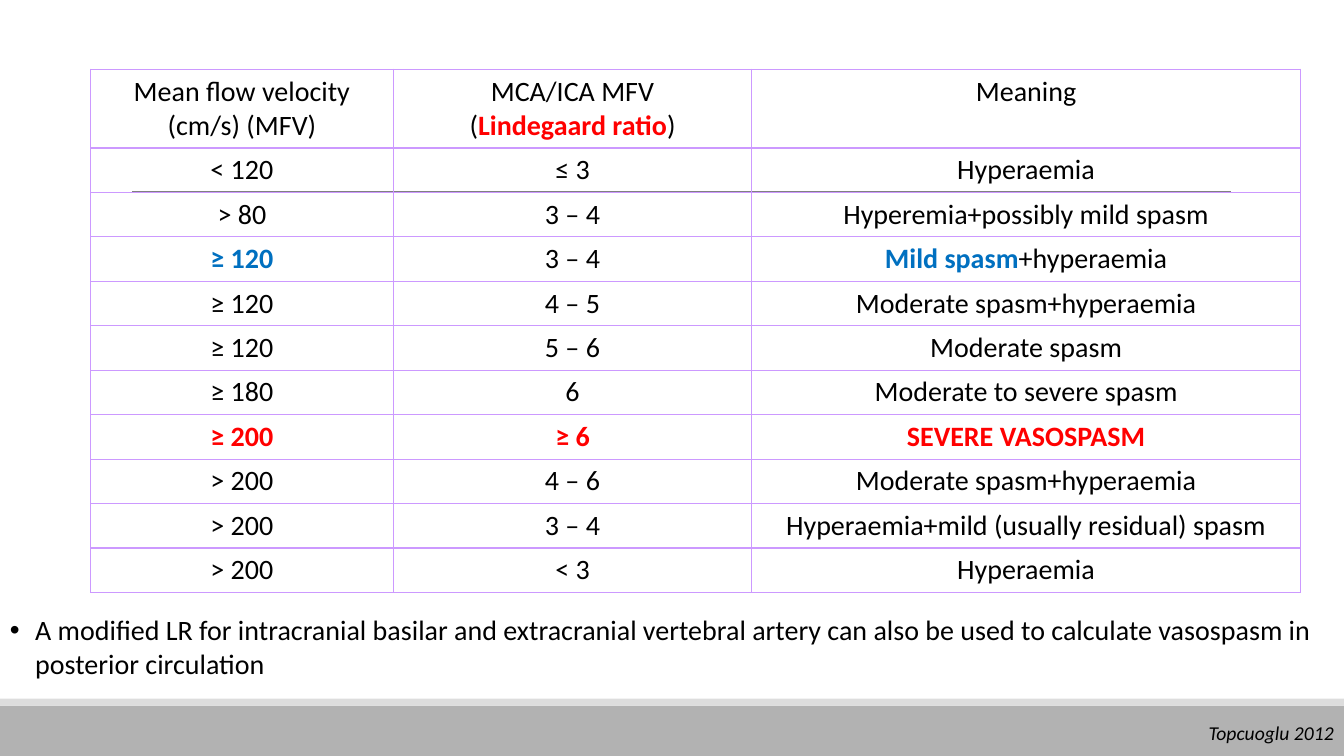
from dataclasses import dataclass

from lxml.etree import SubElement
from pptx import Presentation
from pptx.dml.color import RGBColor
from pptx.enum.shapes import MSO_CONNECTOR, MSO_SHAPE
from pptx.enum.text import PP_ALIGN
from pptx.oxml.ns import qn
from pptx.util import Pt


@dataclass(frozen=True)
class Theme:
    font: str = "Calibri"
    body_size: int = 20
    source_size: int = 14
    text: str = "000000"
    red: str = "FF0000"
    blue: str = "0070C0"
    border: str = "CC99FF"
    rule: str = "808080"
    footer: str = "B2B2B2"
    footer_edge: str = "DDDDDD"


THEME = Theme()
SLIDE_WIDTH, SLIDE_HEIGHT = 960, 540
COLUMN_WIDTHS = [216, 256.3, 391.7]
HEADER_HEIGHT, ROW_HEIGHT = 56, 31.75

ROWS = [
    ("Mean flow velocity (cm/s) (MFV)", "MCA/ICA MFV\n(Lindegaard ratio)", "Meaning"),
    ("< 120", "≤ 3", "Hyperaemia"),
    ("> 80", "3 – 4", "Hyperemia+possibly mild spasm"),
    ("≥ 120", "3 – 4", "Mild spasm+hyperaemia"),
    ("≥ 120", "4 – 5", "Moderate spasm+hyperaemia"),
    ("≥ 120", "5 – 6", "Moderate spasm"),
    ("≥ 180", "6", "Moderate to severe spasm"),
    ("≥ 200", "≥ 6", "SEVERE VASOSPASM"),
    ("> 200", "4 – 6", "Moderate spasm+hyperaemia"),
    ("> 200", "3 – 4", "Hyperaemia+mild (usually residual) spasm"),
    ("> 200", "< 3", "Hyperaemia"),
]
HIGHLIGHTS = {
    (0, 1): ("Lindegaard ratio", THEME.red),
    (3, 0): ("≥ 120", THEME.blue),
    (3, 2): ("Mild spasm", THEME.blue),
    (7, 0): ("≥ 200", THEME.red),
    (7, 1): ("≥ 6", THEME.red),
    (7, 2): ("SEVERE VASOSPASM", THEME.red),
}


class SlideBuilder:
    def __init__(self, page, theme):
        self.page = page
        self.theme = theme

    def style(self, span, size, colour=None, bold=False, italic=False):
        font = span.font
        font.name, font.size = self.theme.font, Pt(size)
        font.bold, font.italic = bold, italic
        font.color.rgb = RGBColor.from_string(colour or self.theme.text)

    def bar(self, top, height, colour):
        bar = self.page.shapes.add_shape(
            MSO_SHAPE.RECTANGLE, 0, Pt(top), Pt(SLIDE_WIDTH), Pt(height))
        bar.shadow.inherit = False
        bar.fill.solid()
        bar.fill.fore_color.rgb = RGBColor.from_string(colour)
        bar.line.fill.background()

    def rule(self, left, right, top):
        rule = self.page.shapes.add_connector(
            MSO_CONNECTOR.STRAIGHT, Pt(left), Pt(top), Pt(right), Pt(top))
        rule.line.width = Pt(0.5)
        rule.line.color.rgb = RGBColor.from_string(self.theme.rule)
        SubElement(rule.element.spPr, qn("a:effectLst"))

    def text(self, left, top, width, height, words, size, wrap=True, italic=False):
        box = self.page.shapes.add_textbox(Pt(left), Pt(top), Pt(width), Pt(height))
        box.text_frame.word_wrap = wrap
        box.text_frame.text = words
        para = box.text_frame.paragraphs[0]
        self.style(para.runs[0], size, italic=italic)
        return para

    def bullet(self, para, indent):
        properties = para._p.get_or_add_pPr()
        properties.set("marL", str(Pt(indent)))
        properties.set("indent", str(-Pt(indent)))
        SubElement(properties, qn("a:buFont"), typeface="Arial")
        SubElement(properties, qn("a:buChar"), char="•")

    def borders(self, cell):
        properties = cell._tc.get_or_add_tcPr()
        for side in ("lnL", "lnR", "lnT", "lnB"):
            line = SubElement(properties, qn(f"a:{side}"), w=str(Pt(1)))
            fill = SubElement(line, qn("a:solidFill"))
            SubElement(fill, qn("a:srgbClr"), val=self.theme.border)

    def cell(self, cell, words, highlight):
        cell.margin_left = cell.margin_right = Pt(9.36)
        cell.margin_top = cell.margin_bottom = Pt(3.6)
        self.borders(cell)
        cell.fill.background()
        cell.text_frame.text = words
        phrase, colour = highlight
        for para in cell.text_frame.paragraphs:
            para.alignment = PP_ALIGN.CENTER
            if phrase and phrase in para.text:
                before, _, after = para.text.partition(phrase)
                para.text = before
                for piece in filter(None, (phrase, after)):
                    para.add_run().text = piece
            for span in para.runs:
                marked = span.text == phrase
                self.style(span, self.theme.body_size, colour if marked else None, marked)

    def table(self, left, top, rows, highlights):
        heights = [HEADER_HEIGHT] + [ROW_HEIGHT] * (len(rows) - 1)
        table = self.page.shapes.add_table(
            len(rows), len(COLUMN_WIDTHS), Pt(left), Pt(top),
            Pt(sum(COLUMN_WIDTHS)), Pt(sum(heights))).table
        table.first_row = table.horz_banding = False
        for column, width in zip(table.columns, COLUMN_WIDTHS):
            column.width = Pt(width)
        for row, height in zip(table.rows, heights):
            row.height = Pt(height)
        for r, row in enumerate(rows):
            for c, words in enumerate(row):
                self.cell(table.cell(r, c), words, highlights.get((r, c), (None, None)))


def main():
    deck = Presentation()
    deck.slide_width, deck.slide_height = Pt(SLIDE_WIDTH), Pt(SLIDE_HEIGHT)
    page = deck.slides.add_slide(deck.slide_layouts[6])
    builder = SlideBuilder(page, THEME)

    builder.bar(504, 36, THEME.footer)
    builder.bar(499, 5, THEME.footer_edge)
    builder.rule(94.3, 879, 136.8)
    builder.table(64.8, 49.5, ROWS, HIGHLIGHTS)

    note = builder.text(
        0, 434.2, SLIDE_WIDTH, 55.7,
        "A modified LR for intracranial basilar and extracranial vertebral artery "
        "can also be used to calculate vasospasm in posterior circulation",
        THEME.body_size)
    builder.bullet(note, 18)
    source = builder.text(
        854.6, 511.2, 105.4, 24.5, "Topcuoglu 2012", THEME.source_size,
        wrap=False, italic=True)
    source.alignment = PP_ALIGN.RIGHT

    deck.save("out.pptx")


if __name__ == "__main__":
    main()
